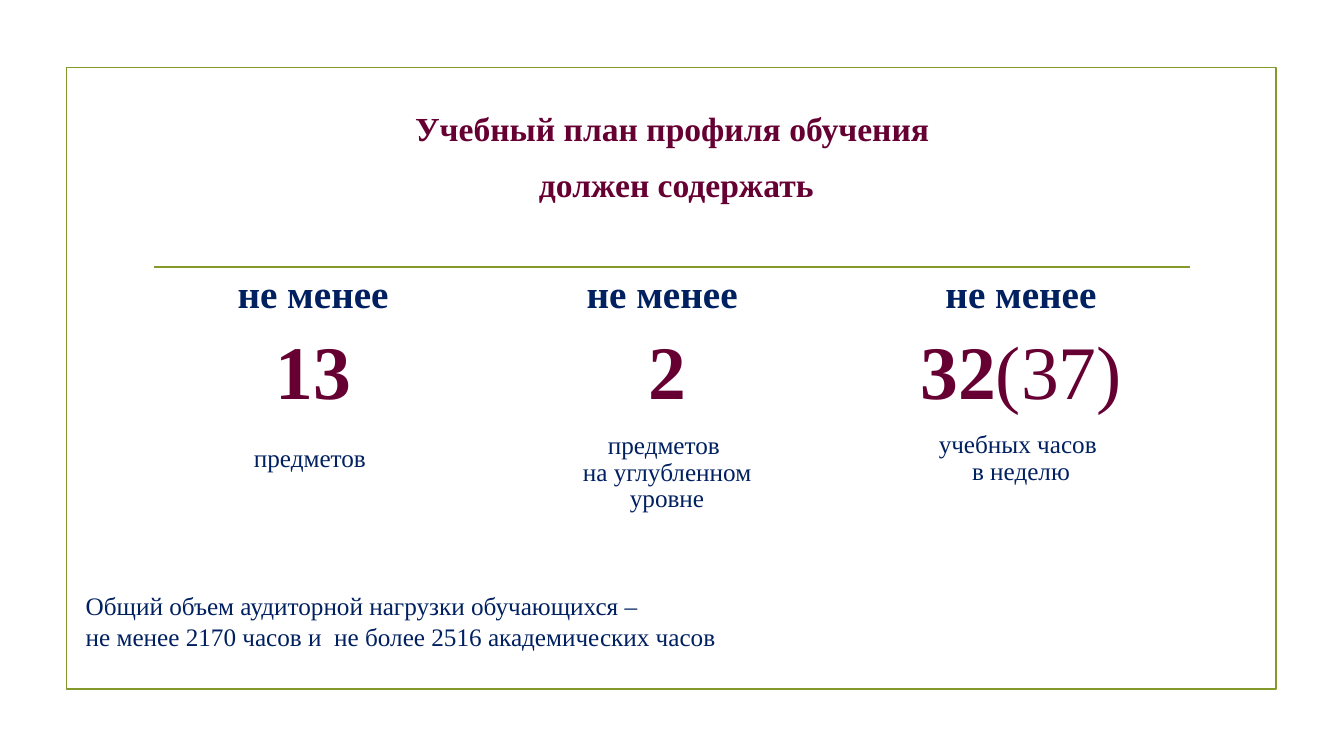
from lxml import etree
from pptx import Presentation
from pptx.dml.color import RGBColor
from pptx.enum.shapes import MSO_CONNECTOR, MSO_SHAPE
from pptx.enum.text import MSO_ANCHOR, PP_ALIGN
from pptx.oxml.ns import qn
from pptx.util import Cm, Pt

CENTER, LEFT = PP_ALIGN.CENTER, PP_ALIGN.LEFT
MIDDLE = MSO_ANCHOR.MIDDLE
RECTANGLE, STRAIGHT = MSO_SHAPE.RECTANGLE, MSO_CONNECTOR.STRAIGHT

FONT = "Times New Roman"
OLIVE, WINE, NAVY = "83992A", "660033", "002060"
PLAIN_TABLE_STYLE = "{2D5ABB26-0587-4C30-8999-92F81FD0307C}"

TITLE = ["Учебный план профиля обучения ", "должен содержать"]
NOTE = [
    "Общий объем аудиторной нагрузки обучающихся –",
    "не менее 2170 часов и  не более 2516 академических часов",
]
# Each column: lead-in, bold number, regular addition, unit lines
REQUIREMENTS = [
    ("не менее", "13", "", ["предметов "]),
    ("не менее ", "2", "", ["предметов ", "на углубленном", "уровне"]),
    ("не менее", "32", "(37)", ["учебных часов ", "в неделю"]),
]
ROW_HEIGHTS = [1.35, 2.36, 2.36, 2.46]
COLUMN_WIDTH = 8.92
UNIT_LIFT = 0.7  # raises the shorter unit labels


def color(value):
    return RGBColor.from_string(value)


def write(frame, lines, size, ink, align=LEFT):
    """Fill a text frame; each line is a list of (text, bold) runs."""
    for index, runs in enumerate(lines):
        paragraph = frame.paragraphs[0] if index == 0 else frame.add_paragraph()
        paragraph.alignment = align
        for text, bold in runs:
            run = paragraph.add_run()
            run.text = text
            run.font.name = FONT
            run.font.size = Pt(size)
            run.font.bold = bold
            run.font.color.rgb = color(ink)


def add_text_frame(slide, left, top, width, height):
    box = slide.shapes.add_textbox(Cm(left), Cm(top), Cm(width), Cm(height))
    box.text_frame.word_wrap = True
    return box.text_frame


def add_frame_and_rule(slide):
    frame = slide.shapes.add_shape(RECTANGLE, Cm(1.68), Cm(1.7), Cm(30.48), Cm(15.67))
    frame.shadow.inherit = False
    frame.fill.background()
    rule = slide.shapes.add_connector(STRAIGHT, Cm(3.89), Cm(6.73), Cm(30), Cm(6.73))
    etree.SubElement(rule._element.spPr, qn("a:effectLst"))
    for shape in (frame, rule):
        shape.line.color.rgb = color(OLIVE)
        shape.line.width = Pt(1.25)


def add_requirements(slide):
    columns = len(REQUIREMENTS)
    graphic = slide.shapes.add_table(
        len(ROW_HEIGHTS), columns, Cm(3.43), Cm(6.71),
        Cm(COLUMN_WIDTH * columns), Cm(sum(ROW_HEIGHTS)))
    table = graphic.table
    table.first_row = table.horz_banding = False
    table._tbl.tblPr.find(qn("a:tableStyleId")).text = PLAIN_TABLE_STYLE
    for row, height in zip(table.rows, ROW_HEIGHTS):
        row.height = Cm(height)
    for cell in table.iter_cells():
        cell.fill.background()
        cell.vertical_anchor = MIDDLE
        cell.margin_left = cell.margin_right = Cm(0.33)
        cell.margin_top = cell.margin_bottom = Cm(0.13)

    most_lines = max(len(units) for *_, units in REQUIREMENTS)
    for index, (lead, number, addition, units) in enumerate(REQUIREMENTS):
        number_runs = [(number, True)] + ([(addition, False)] if addition else [])
        contents = [
            ([[(lead, True)]], 28, NAVY),
            ([number_runs], 54, WINE),
            ([[(unit, False)] for unit in units], 18, NAVY),
        ]
        for row, (lines, size, ink) in enumerate(contents):
            write(table.cell(row, index).text_frame, lines, size, ink, CENTER)
        unit_cell = table.cell(2, index)
        for paragraph in unit_cell.text_frame.paragraphs:
            paragraph.line_spacing = 0.95
        if len(units) < most_lines:
            unit_cell.margin_bottom = Cm(0.13 + UNIT_LIFT)


def main():
    presentation = Presentation()
    presentation.slide_width, presentation.slide_height = Cm(33.87), Cm(19.05)
    slide = presentation.slides.add_slide(presentation.slide_layouts[6])

    add_frame_and_rule(slide)
    title = add_text_frame(slide, 2.39, 2.59, 29.31, 13.56)
    write(title, [[(line, True)] for line in TITLE], 24, WINE, CENTER)
    for paragraph in title.paragraphs:
        paragraph.space_after = Pt(6)
    title.paragraphs[1].space_before = Pt(5.5)
    add_requirements(slide)
    note = add_text_frame(slide, 1.91, 14.76, 16.99, 2.57)
    write(note, [[(line, False)] for line in NOTE], 18, NAVY)

    presentation.save("out.pptx")


if __name__ == "__main__":
    main()
